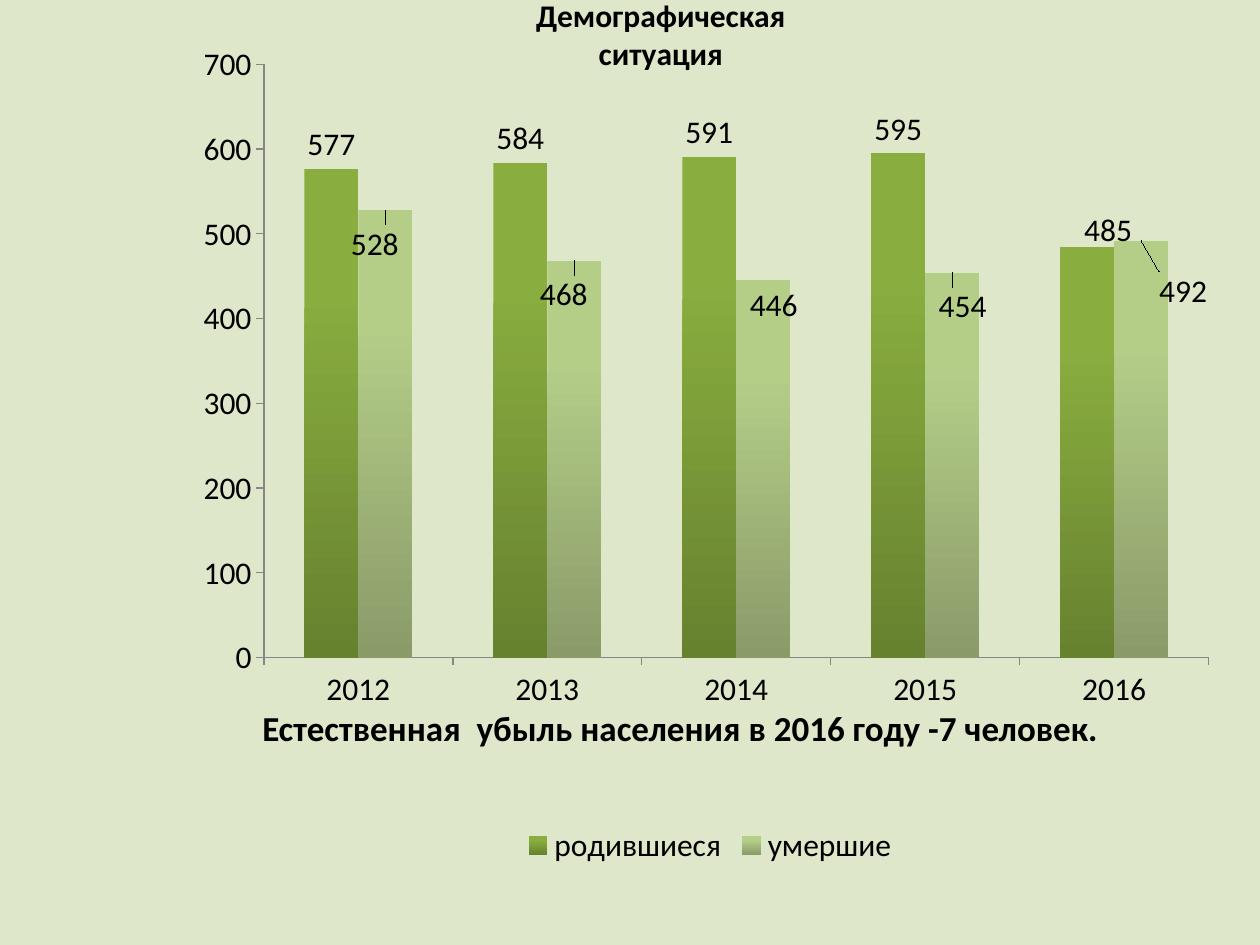
from lxml.etree import SubElement
from pptx import Presentation
from pptx.chart.data import CategoryChartData
from pptx.dml.color import RGBColor
from pptx.enum.chart import (XL_CHART_TYPE as ChartType, XL_LABEL_POSITION as LabelPos,
                             XL_LEGEND_POSITION as LegendPos, XL_TICK_MARK as Tick)
from pptx.enum.text import MSO_ANCHOR as Anchor, PP_ALIGN as Align
from pptx.oxml import parse_xml
from pptx.oxml.ns import nsdecls, qn
from pptx.util import Inches, Pt

YEARS = ["2012", "2013", "2014", "2015", "2016"]
SERIES = [
    ("родившиеся", [577, 584, 591, 595, 485], ("89AD3F", "67822F"),
     {4: (0.02, 0.01)}),
    ("умершие", [528, 468, 446, 454, 492], ("B4CE88", "8A9B69"),
     {0: (-0.01, 0.07), 1: (-0.01, 0.07), 2: (0.01, 0.06),
      3: (0.01, 0.07), 4: (0.04, 0.09)}),
]


def rgb(value):
    return RGBColor.from_string(value)


def set_font(font, size, bold=False):
    font.name = "Calibri"
    font.size = Pt(size)
    font.bold = bold
    font.color.rgb = rgb("000000")


def add_layout(values, inner=False):
    layout = parse_xml(f"<c:layout {nsdecls('c')}><c:manualLayout/></c:layout>")
    manual = layout[0]
    if inner:
        SubElement(manual, qn("c:layoutTarget"), val="inner")
        SubElement(manual, qn("c:xMode"), val="edge")
        SubElement(manual, qn("c:yMode"), val="edge")
    for key, value in zip("xywh", values):
        SubElement(manual, qn(f"c:{key}"), val=str(value))
    return layout


def add_text(slide, box, text, size, anchor):
    tf = slide.shapes.add_textbox(*map(Inches, box)).text_frame
    tf.word_wrap = True
    tf.vertical_anchor = anchor
    p = tf.paragraphs[0]
    p.text = text
    p.alignment = Align.CENTER
    set_font(p.font, size, bold=True)


def style_series(series, colors, offsets):
    fill = series.format.fill
    fill.gradient()
    fill.gradient_angle = 270
    for stop, position, color in zip(fill.gradient_stops, (0.25, 1), colors):
        stop.position = position
        stop.color.rgb = rgb(color)
    labels = series.data_labels
    labels.show_value = True
    labels.position = LabelPos.OUTSIDE_END
    set_font(labels.font, 18)
    for index in offsets:
        label = series.points[index].data_label
        label.position = LabelPos.OUTSIDE_END
        set_font(label.font, 18)
    for idx in series.format.fill and labels._element.findall(
            f"{qn('c:dLbl')}/{qn('c:idx')}"):
        idx.addnext(add_layout(offsets[int(idx.get("val"))]))


def add_population_chart(slide, box):
    data = CategoryChartData()
    data.categories = YEARS
    for name, values, _, _ in SERIES:
        data.add_series(name, values)
    chart = slide.shapes.add_chart(
        ChartType.COLUMN_CLUSTERED, *map(Inches, box), data).chart
    set_font(chart.font, 18)
    chart.has_title = False
    chart.has_legend = True
    chart.legend.position = LegendPos.BOTTOM
    chart.legend.include_in_layout = False

    plot = chart.plots[0]
    plot.gap_width = 150
    plot.overlap = 0
    plot.vary_by_categories = False
    for series, (_, _, colors, offsets) in zip(plot.series, SERIES):
        style_series(series, colors, offsets)

    for axis in (chart.category_axis, chart.value_axis):
        axis.has_major_gridlines = False
        axis.major_tick_mark = Tick.OUTSIDE
        axis.minor_tick_mark = Tick.NONE
        axis.format.line.color.rgb = rgb("868686")
        axis.format.line.width = Pt(0.75)
    chart.value_axis.minimum_scale = 0
    chart.value_axis.maximum_scale = 700
    chart.value_axis.major_unit = 100

    area = chart._chartSpace.chart.plotArea
    for old in area.findall(qn("c:layout")):
        area.remove(old)
    area.insert(0, add_layout((0.076, 0.023, 0.898, 0.719), inner=True))


def main():
    prs = Presentation()
    prs.slide_width = Inches(10)
    prs.slide_height = Inches(7.5)
    slide = prs.slides.add_slide(prs.slide_layouts[6])
    slide.background.fill.solid()
    slide.background.fill.fore_color.rgb = rgb("DEE7CA")
    add_text(slide, (3.6, 0, 3.29, 0.62), "Демографическая\vситуация", 18, Anchor.BOTTOM)
    add_text(slide, (1.38, 5.56, 8.04, 0.66),
             "Естественная  убыль населения в 2016 году -7 человек.", 20, Anchor.TOP)
    add_population_chart(slide, (1.46, 0.36, 8.35, 6.55))
    prs.save("out.pptx")


if __name__ == "__main__":
    main()
